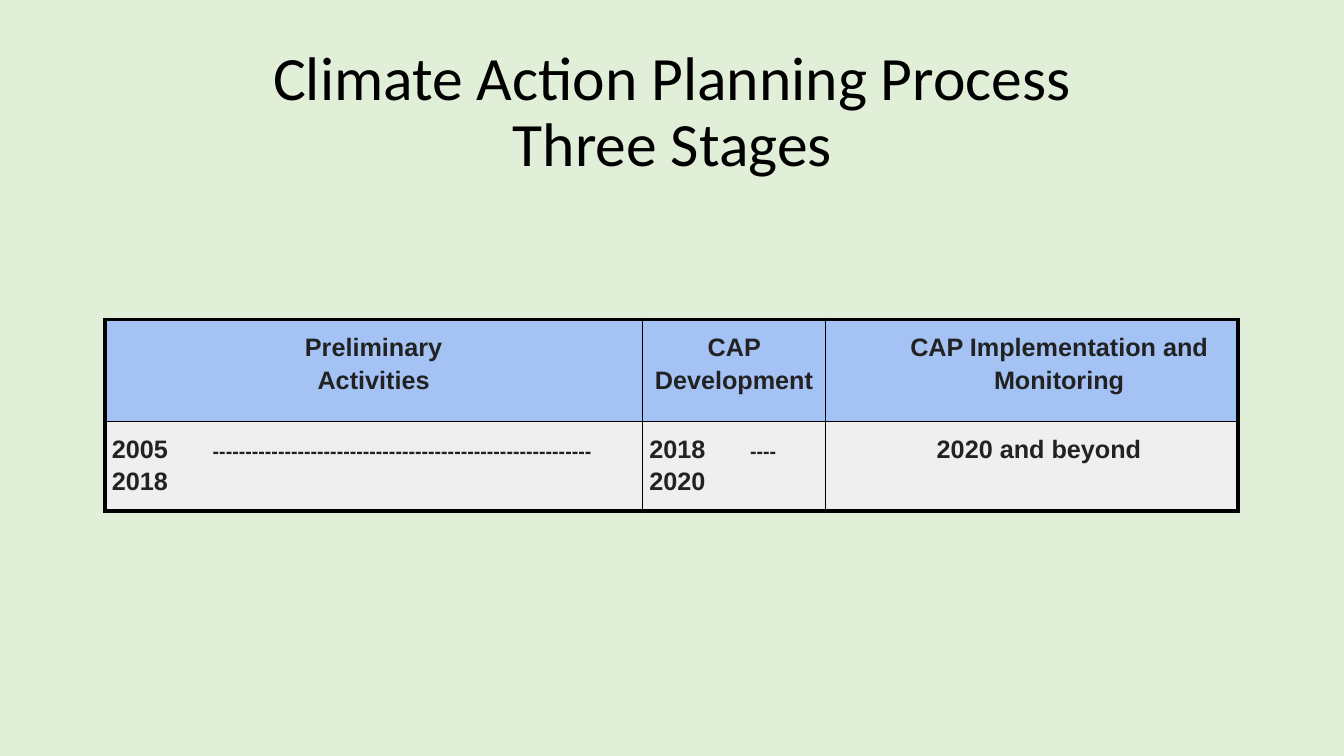
from lxml import etree
from pptx import Presentation
from pptx import util as u
from pptx.dml.color import RGBColor
from pptx.enum import text
from pptx.oxml.ns import qn

INK, HEADER, BODY, BORDER = "222222", "A4C2F4", "EFEFEF", "000000"
CENTER, LEFT = text.PP_ALIGN.CENTER, text.PP_ALIGN.LEFT


def paint(fill, color):
    fill.solid()
    fill.fore_color.rgb = RGBColor.from_string(color)


def add_run(para, words, font, size, color, bold):
    span = para.add_run()
    span.text = words
    span.font.name = font
    span.font.size = u.Pt(size)
    span.font.bold = bold
    paint(span.font.fill, color)


deck = Presentation()
deck.slide_width, deck.slide_height = u.Inches(13.33), u.Inches(7.5)
page = deck.slides.add_slide(deck.slide_layouts[6])
paint(page.background.fill, "E1EFD8")

title = page.shapes.add_textbox(u.Inches(0.92), u.Inches(0.4), u.Inches(11.5), u.Inches(1.45))
frame = title.text_frame
frame.word_wrap = True
frame.vertical_anchor = text.MSO_ANCHOR.MIDDLE
frame.margin_left = frame.margin_right = frame.margin_top = frame.margin_bottom = u.Inches(0.1)
for index, line in enumerate(["Climate Action Planning Process", "Three Stages"]):
    para = frame.add_paragraph() if index else frame.paragraphs[0]
    para.alignment = CENTER
    para.line_spacing = 0.9
    add_run(para, line, "Calibri", 44, "000000", False)

columns, rows = [5.33, 1.82, 4.09], [1.01, 0.54]
stages = [
    [
        (CENTER, 0, [], [[("Preliminary", 18)], [("Activities", 18)]]),
        (CENTER, 0, [], [[("CAP Development", 18)]]),
        (CENTER, 0.54, [], [[("CAP Implementation and Monitoring", 18)]]),
    ],
    [
        (LEFT, 0, [0.67], [[("2005", 18), ("\t" + "-" * 58 + " ", 14), ("2018", 18)]]),
        (LEFT, 0, [0.69, 1.12], [[("2018", 18), ("\t----\t", 14), ("2020", 18)]]),
        (CENTER, 0.14, [], [[("2020 and beyond", 18)]]),
    ],
]
table = page.shapes.add_table(
    len(rows), len(columns), u.Inches(1.04), u.Inches(3.17),
    u.Inches(sum(columns)), u.Inches(sum(rows))).table
table.first_row = table.horz_banding = False
for column, width in zip(table.columns, columns):
    column.width = u.Inches(width)
for row, height in zip(table.rows, rows):
    row.height = u.Inches(height)

for r, stage_row in enumerate(stages):
    for c, (align, indent, stops, lines) in enumerate(stage_row):
        cell = table.cell(r, c)
        cell.margin_left = cell.margin_right = u.Inches(0.07)
        cell.margin_top = cell.margin_bottom = u.Inches(0.1)
        properties = cell._tc.get_or_add_tcPr()
        outer = {"L": c == 0, "R": c == len(columns) - 1, "T": r == 0, "B": r == len(rows) - 1}
        for side, thick in outer.items():
            edge = etree.SubElement(properties, qn(f"a:ln{side}"), w=str(u.Pt(3 if thick else 1)))
            solid = etree.SubElement(edge, qn("a:solidFill"))
            etree.SubElement(solid, qn("a:srgbClr"), val=BORDER)
        paint(cell.fill, BODY if r else HEADER)

        for index, spans in enumerate(lines):
            para = cell.text_frame.add_paragraph() if index else cell.text_frame.paragraphs[0]
            para.alignment = align
            para.line_spacing = 1.15
            layout = para._p.get_or_add_pPr()
            layout.set("marL", str(u.Inches(indent)))
            layout.set("indent", "0")
            if stops:
                tabs = etree.SubElement(layout, qn("a:tabLst"))
                for stop in stops:
                    etree.SubElement(tabs, qn("a:tab"), pos=str(u.Inches(stop)), algn="l")
            for words, size in spans:
                add_run(para, words, "Arial", size, INK, True)

deck.save("out.pptx")
